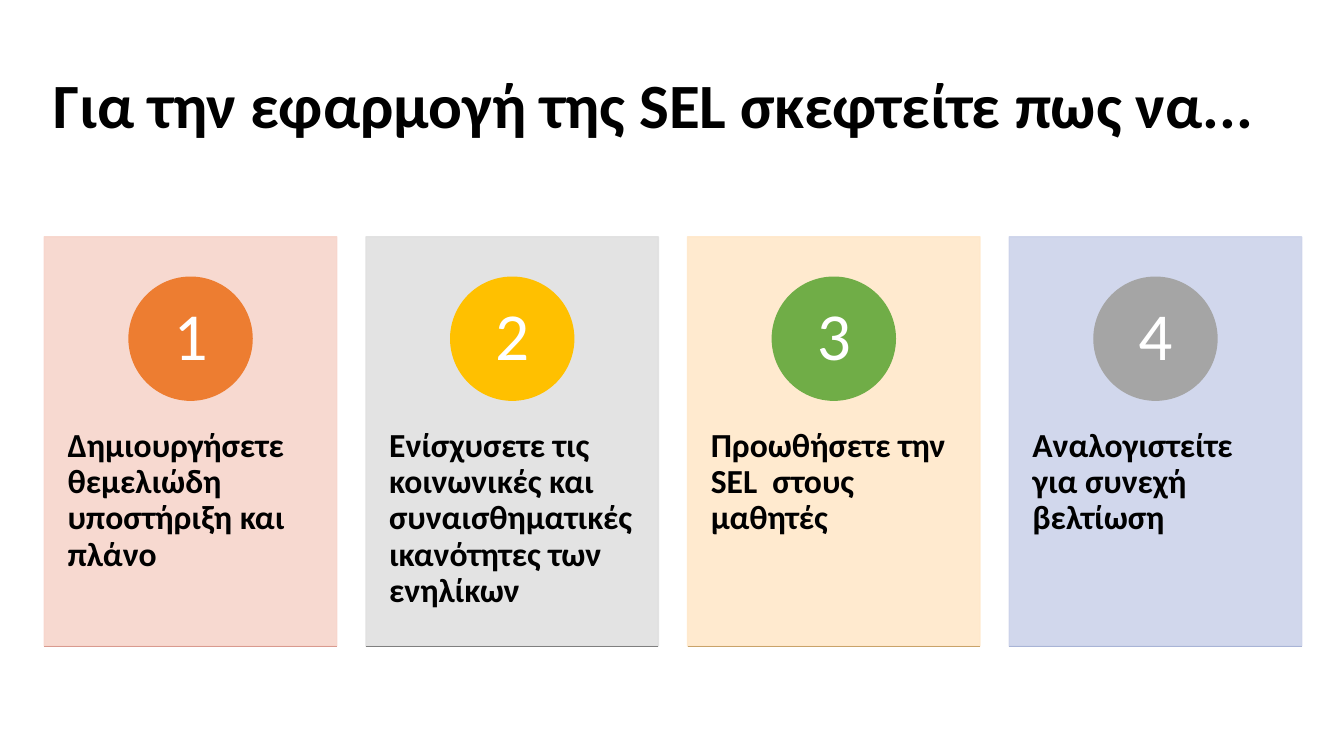
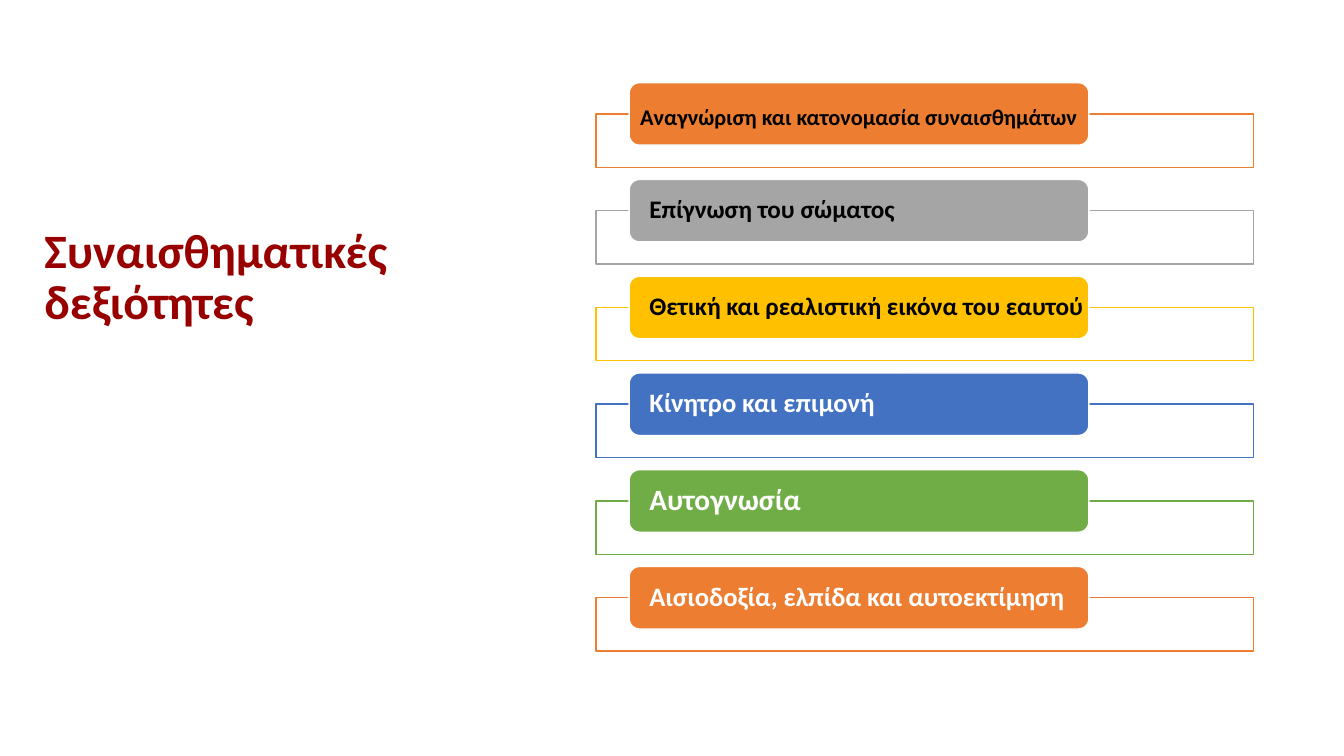
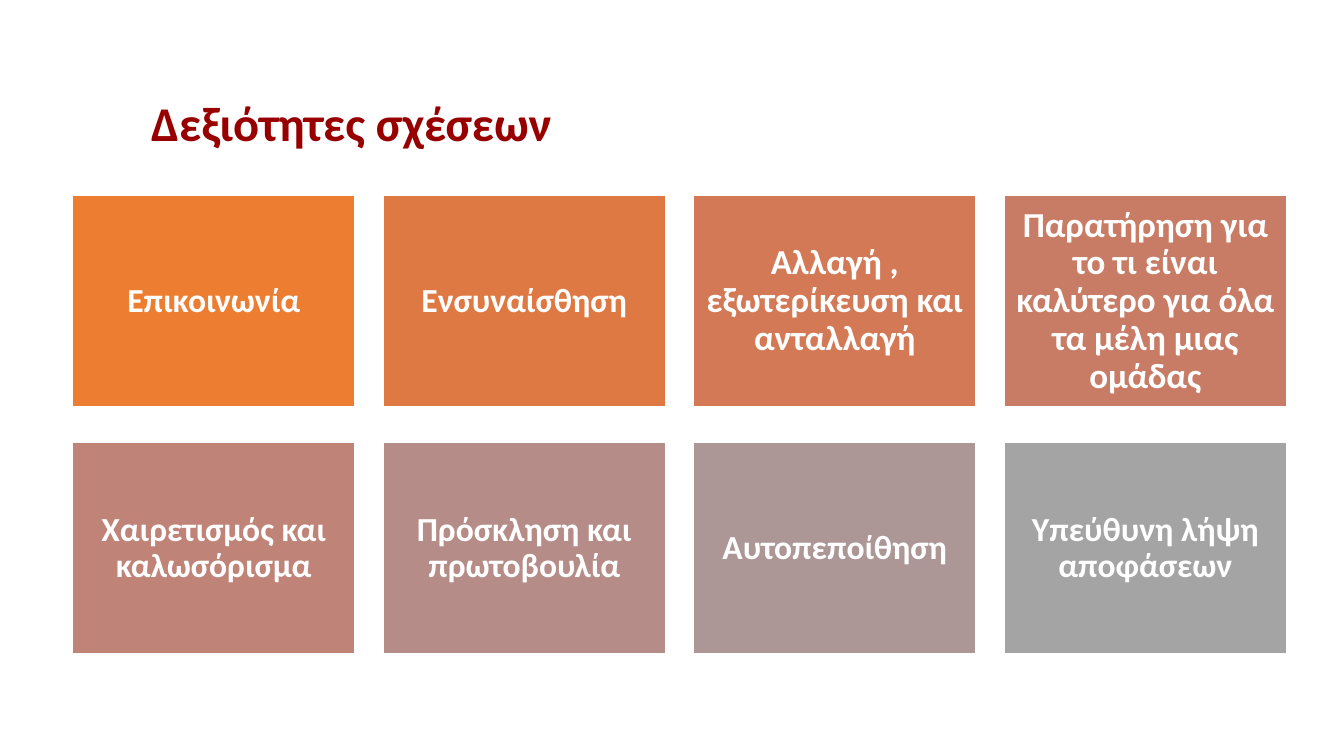
"""Build three slides on social and emotional learning (SEL) skills."""
from lxml import etree
from pptx import Presentation
from pptx.dml.color import RGBColor
from pptx.enum import shapes, text
from pptx.oxml import ns
from pptx.util import Inches, Pt

FONT = "Calibri"
BLACK = RGBColor(0x00, 0x00, 0x00)
WHITE = RGBColor(0xFF, 0xFF, 0xFF)
DARK_RED = RGBColor(0x98, 0x00, 0x00)
ORANGE = RGBColor(0xED, 0x7D, 0x31)
GOLD = RGBColor(0xFF, 0xC0, 0x00)
GREEN = RGBColor(0x70, 0xAD, 0x47)
GREY = RGBColor(0xA5, 0xA5, 0xA5)
BLUE = RGBColor(0x43, 0x72, 0xC3)
PINK = RGBColor(0xF7, 0xD5, 0xCB)
PALE_GREY = RGBColor(0xE0, 0xE0, 0xE0)
CREAM = RGBColor(0xFF, 0xE8, 0xCA)
PALE_BLUE = RGBColor(0xCC, 0xD3, 0xEA)
PINK_EDGE = RGBColor(0xD9, 0x9A, 0x8F)
GREY_EDGE = RGBColor(0x7F, 0x7F, 0x7F)
TAN_EDGE = RGBColor(0xC9, 0xA3, 0x6A)
BLUE_EDGE = RGBColor(0xA9, 0xB4, 0xD6)
ORANGE_TO_GREY = [
    ORANGE,
    RGBColor(0xDF, 0x79, 0x43),
    RGBColor(0xD4, 0x79, 0x55),
    RGBColor(0xC8, 0x7C, 0x66),
    RGBColor(0xBF, 0x83, 0x77),
    RGBColor(0xB5, 0x8C, 0x87),
    RGBColor(0xAC, 0x96, 0x96),
    RGBColor(0xA4, 0xA4, 0xA4),
]
LEFT, CENTER = text.PP_ALIGN.LEFT, text.PP_ALIGN.CENTER
TOP, MIDDLE, BOTTOM = (text.MSO_ANCHOR.TOP, text.MSO_ANCHOR.MIDDLE,
                       text.MSO_ANCHOR.BOTTOM)
KIND = shapes.MSO_SHAPE


def add_box(page, kind, place, fill, line):
    """Add a filled and outlined shape without a shadow."""
    box = page.shapes.add_shape(kind, *map(Inches, place))
    box.shadow.inherit = False
    box.fill.solid()
    box.fill.fore_color.rgb = fill
    box.line.color.rgb = line
    box.line.width = Pt(1)
    return box


def write(box, words, size, color, align, anchor, insets, bold=True):
    """Put one formatted paragraph into a shape; insets run left, top, right, bottom."""
    frame = box.text_frame
    frame.text = words
    frame.word_wrap = True
    frame.auto_size = text.MSO_AUTO_SIZE.NONE
    frame.vertical_anchor = anchor
    (frame.margin_left, frame.margin_top,
     frame.margin_right, frame.margin_bottom) = map(Inches, insets)
    para = frame.paragraphs[0]
    para.alignment = align
    para.line_spacing = 0.9
    font = para.runs[0].font
    font.name, font.size, font.bold = FONT, Pt(size), bold
    font.color.rgb = color


deck = Presentation()
deck.slide_width, deck.slide_height = Inches(13.33), Inches(7.5)

titles = [
    ("Για την εφαρμογή της SEL σκεφτείτε πως να...",
     (0.43, 0.35, 12.48, 1.45), 45, BLACK, MIDDLE),
    ("Συναισθηματικές δεξιότητες", (0.34, 2.2, 4.2, 1.84), 34.2, DARK_RED, TOP),
    ("Δεξιότητες σχέσεων", (1.4, 0.44, 10.77, 1.12), 34.6, DARK_RED, BOTTOM),
]
pages = []
for words, place, size, color, anchor in titles:
    page = deck.slides.add_slide(deck.slide_layouts[5])
    title = page.shapes.title
    title.left, title.top, title.width, title.height = map(Inches, place)
    write(title, words, size, color, LEFT, anchor, (0.1, 0.05, 0.1, 0.05))
    pages.append(page)
steps_page, emotions_page, relations_page = pages

steps = [
    ("Δημιουργήσετε θεμελιώδη υποστήριξη και πλάνο", PINK, ORANGE, PINK_EDGE),
    ("Ενίσχυσετε τις κοινωνικές και συναισθηματικές ικανότητες των ενηλίκων",
     PALE_GREY, GOLD, GREY_EDGE),
    ("Προωθήσετε την SEL  στους μαθητές", CREAM, GREEN, TAN_EDGE),
    ("Αναλογιστείτε για συνεχή βελτίωση", PALE_BLUE, GREY, BLUE_EDGE),
]
for index, (words, fill, accent, edge) in enumerate(steps):
    left = 0.44 + 3.19 * index
    card = add_box(steps_page, KIND.RECTANGLE, (left, 2.35, 2.9, 4.06), fill, fill)
    for tint in card._element.spPr.iter(ns.qn("a:srgbClr")):
        etree.SubElement(tint, ns.qn("a:alpha"), val="90000")
    write(card, words, 24, BLACK, LEFT, TOP, (0.23, 1.9, 0.23, 0.36))
    circle = add_box(steps_page, KIND.OVAL, (left + 0.84, 2.75, 1.22, 1.22),
                     accent, accent)
    write(circle, str(index + 1), 48, WHITE, CENTER, MIDDLE,
          (0.09, 0.01, 0.09, 0.01), bold=False)
    base = steps_page.shapes.add_connector(
        shapes.MSO_CONNECTOR.STRAIGHT,
        *map(Inches, (left, 6.41, left + 2.9, 6.41)))
    base.line.color.rgb = edge
    base.line.width = Pt(0.75)
    etree.SubElement(base._element.spPr, ns.qn("a:effectLst"))

emotions = [
    ("Αναγνώριση και κατονομασία συναισθημάτων", 16, BLACK, ORANGE, (0.08, 0.08, 0, 0)),
    ("Επίγνωση του σώματος", 18, BLACK, GREY, (0.17, 0, 0, 0)),
    ("Θετική και ρεαλιστική εικόνα του εαυτού", 18, BLACK, GOLD, (0.17, 0, 0, 0)),
    ("Κίνητρο και επιμονή", 19, WHITE, BLUE, (0.17, 0, 0, 0)),
    ("Αυτογνωσία", 21, WHITE, GREEN, (0.17, 0, 0, 0)),
    ("Αισιοδοξία, ελπίδα και αυτοεκτίμηση", 19, WHITE, ORANGE, (0.17, 0, 0, 0)),
]
for index, (words, size, color, accent, insets) in enumerate(emotions):
    top = 0.82 + 0.96 * index
    add_box(emotions_page, KIND.RECTANGLE, (5.91, top + 0.31, 6.52, 0.53), WHITE, accent)
    tab = add_box(emotions_page, KIND.ROUNDED_RECTANGLE, (6.24, top, 4.56, 0.62),
                  accent, WHITE)
    write(tab, words, size, color, LEFT, MIDDLE, insets)

relations = [
    ("Επικοινωνία", 24),
    ("Ενσυναίσθηση", 24),
    ("Αλλαγή , εξωτερίκευση και ανταλλαγή", 25),
    ("Παρατήρηση για το τι είναι καλύτερο για όλα τα μέλη μιας ομάδας", 25),
    ("Χαιρετισμός και καλωσόρισμα", 24),
    ("Πρόσκληση και πρωτοβουλία", 24),
    ("Αυτοπεποίθηση", 24),
    ("Υπεύθυνη λήψη αποφάσεων", 24),
]
for index, ((words, size), fill) in enumerate(zip(relations, ORANGE_TO_GREY)):
    row, column = divmod(index, 4)
    tile = add_box(relations_page, KIND.RECTANGLE,
                   (0.72 + 3.08 * column, 1.94 + 2.45 * row, 2.8, 2.1), fill, WHITE)
    write(tile, words, size, WHITE, CENTER, MIDDLE, (0.1, 0.1, 0.1, 0.1))

deck.save("out.pptx")
